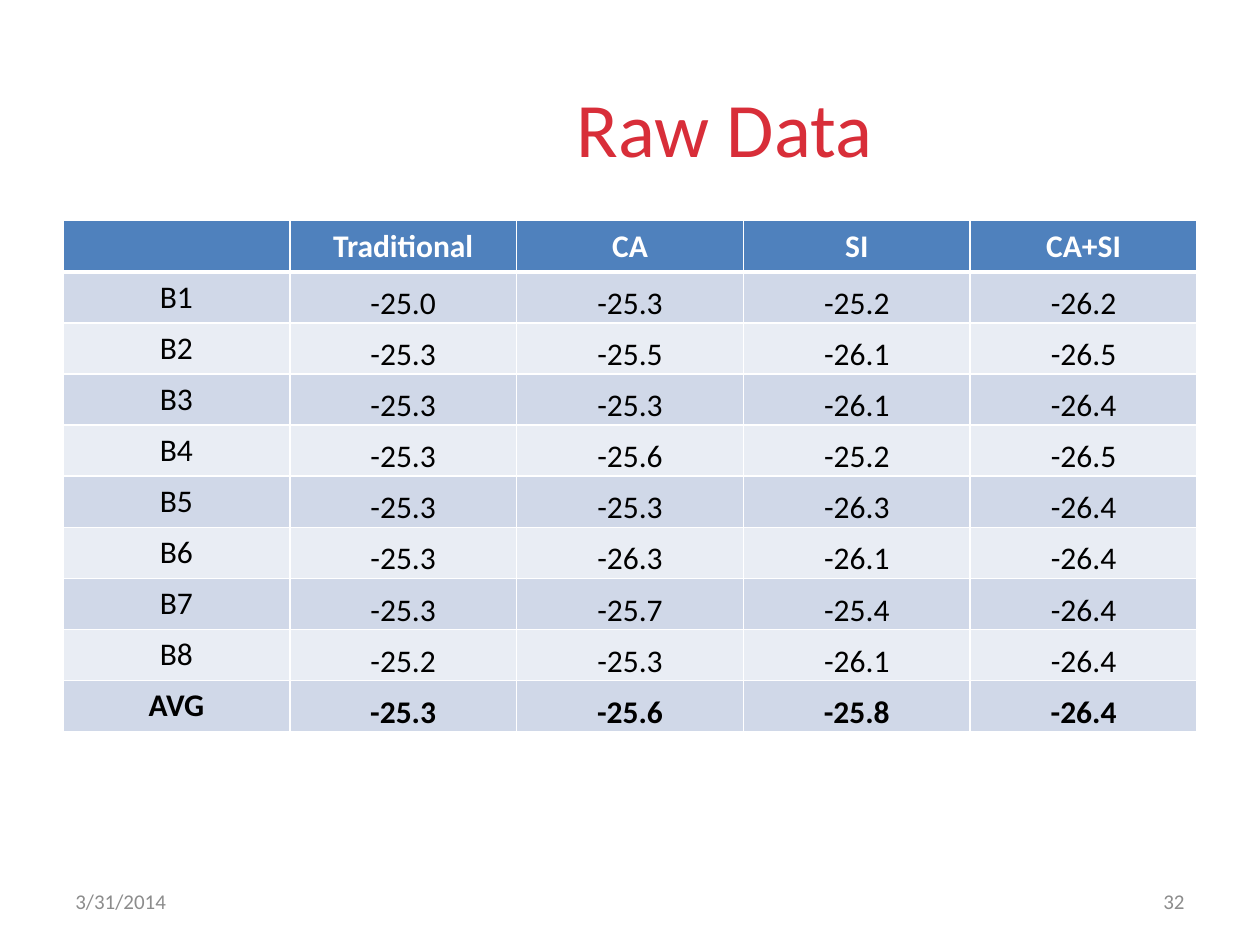
from lxml.etree import SubElement
from pptx import Presentation
from pptx.dml.color import RGBColor
from pptx.enum.text import MSO_ANCHOR as Anchor, PP_ALIGN as Align
from pptx.oxml.ns import qn
from pptx.util import Cm, Pt

RED = RGBColor(0xD8, 0x2E, 0x39)
BLUE = RGBColor(0x4F, 0x81, 0xBD)
BAND_DARK = RGBColor(0xD0, 0xD8, 0xE8)
BAND_LIGHT = RGBColor(0xE9, 0xED, 0xF4)
WHITE = RGBColor(0xFF, 0xFF, 0xFF)
BLACK = RGBColor(0, 0, 0)
GRAY = RGBColor(0x8C, 0x8C, 0x8C)

FONT = "Calibri"
ROWS = [
    ("", "Traditional", "CA", "SI", "CA+SI"),
    ("B1", "-25.0", "-25.3", "-25.2", "-26.2"),
    ("B2", "-25.3", "-25.5", "-26.1", "-26.5"),
    ("B3", "-25.3", "-25.3", "-26.1", "-26.4"),
    ("B4", "-25.3", "-25.6", "-25.2", "-26.5"),
    ("B5", "-25.3", "-25.3", "-26.3", "-26.4"),
    ("B6", "-25.3", "-26.3", "-26.1", "-26.4"),
    ("B7", "-25.3", "-25.7", "-25.4", "-26.4"),
    ("B8", "-25.2", "-25.3", "-26.1", "-26.4"),
    ("AVG", "-25.3", "-25.6", "-25.8", "-26.4"),
]


def write_text(text_frame, text, size, color, align, bold=False):
    text_frame.text = text
    paragraph = text_frame.paragraphs[0]
    paragraph.alignment = align
    for run in paragraph.runs:
        run.font.name = FONT
        run.font.size = Pt(size)
        run.font.bold = bold
        run.font.color.rgb = color


def set_borders(cell, top, bottom):
    """Draw white cell borders; top and bottom are widths in points."""
    properties = cell._tc.get_or_add_tcPr()
    for side, width in (("L", 1), ("R", 1), ("T", top), ("B", bottom)):
        line = SubElement(properties, qn(f"a:ln{side}"), w=str(Pt(width)))
        fill = SubElement(line, qn("a:solidFill"))
        SubElement(fill, qn("a:srgbClr"), val=str(WHITE))


def add_title(slide, text):
    title = slide.shapes.title
    title.left, title.top, title.width, title.height = Cm(5.08), Cm(1.17), Cm(19.05), Cm(2.77)
    title.text_frame.vertical_anchor = Anchor.MIDDLE
    write_text(title.text_frame, text, 44, RED, Align.CENTER)


def format_cell(cell, text, row, column):
    is_header = row == 0
    set_borders(cell, top=3 if row == 1 else 1, bottom=3 if is_header else 1)
    cell.fill.solid()
    cell.fill.fore_color.rgb = BLUE if is_header else BAND_DARK if row % 2 else BAND_LIGHT
    if not is_header and column > 0:
        cell.vertical_anchor = Anchor.BOTTOM
        cell.margin_left = cell.margin_right = cell.margin_top = Cm(0.03)
        cell.margin_bottom = 0
    write_text(cell.text_frame, text, 18, WHITE if is_header else BLACK, Align.CENTER,
               bold=is_header or row == len(ROWS) - 1)


def add_data_table(slide):
    frame = slide.shapes.add_table(len(ROWS), len(ROWS[0]), Cm(1.27), Cm(4.45),
                                   Cm(22.86), Cm(10.3))
    for row, values in enumerate(ROWS):
        for column, value in enumerate(values):
            format_cell(frame.table.cell(row, column), value, row, column)


def add_footer(slide, text, left, width, align):
    box = slide.shapes.add_textbox(left, Cm(17.65), width, Cm(1.02))
    box.text_frame.word_wrap = True
    box.text_frame.vertical_anchor = Anchor.MIDDLE
    write_text(box.text_frame, text, 12, GRAY, align)


def main():
    presentation = Presentation()
    presentation.slide_width, presentation.slide_height = Cm(25.4), Cm(19.05)
    slide = presentation.slides.add_slide(presentation.slide_layouts[5])
    add_title(slide, "Raw Data")
    add_data_table(slide)
    add_footer(slide, "3/31/2014", Cm(1.27), Cm(5.08), Align.LEFT)
    add_footer(slide, "32", Cm(19.69), Cm(4.44), Align.RIGHT)
    presentation.save("out.pptx")


if __name__ == "__main__":
    main()
